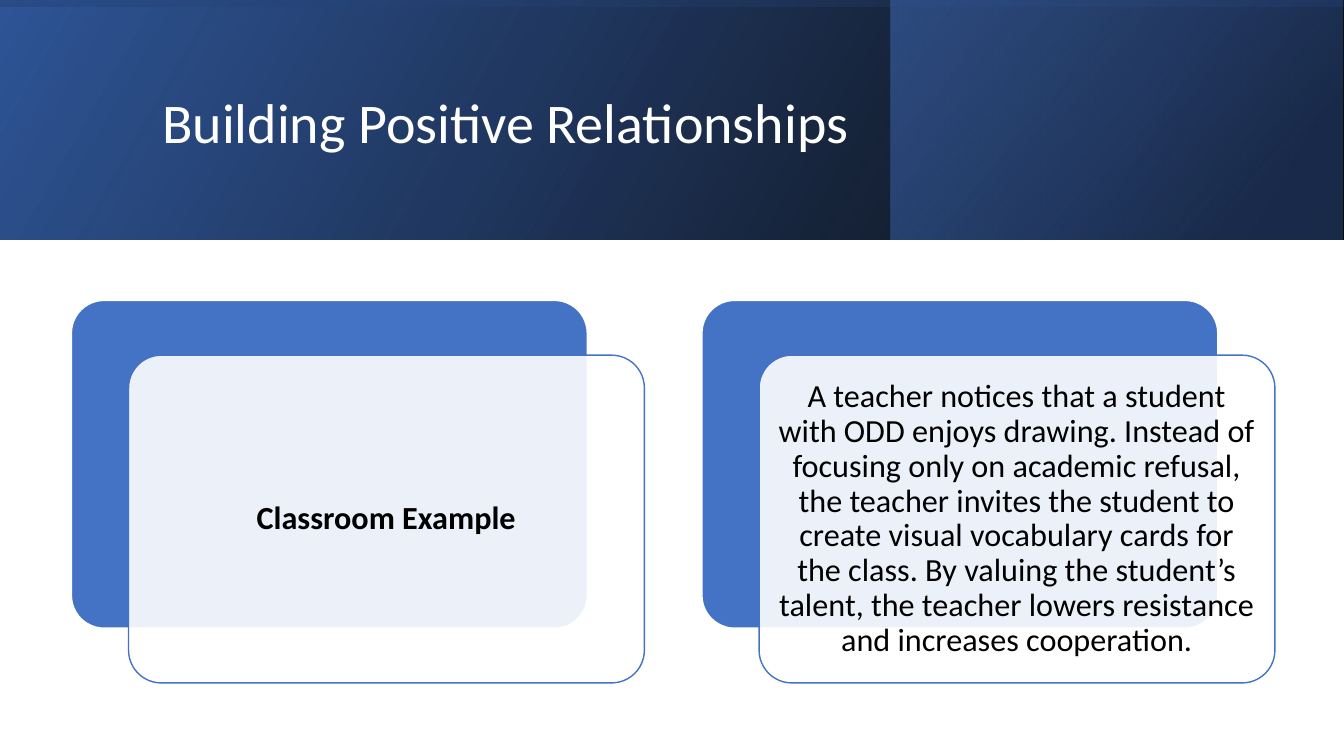
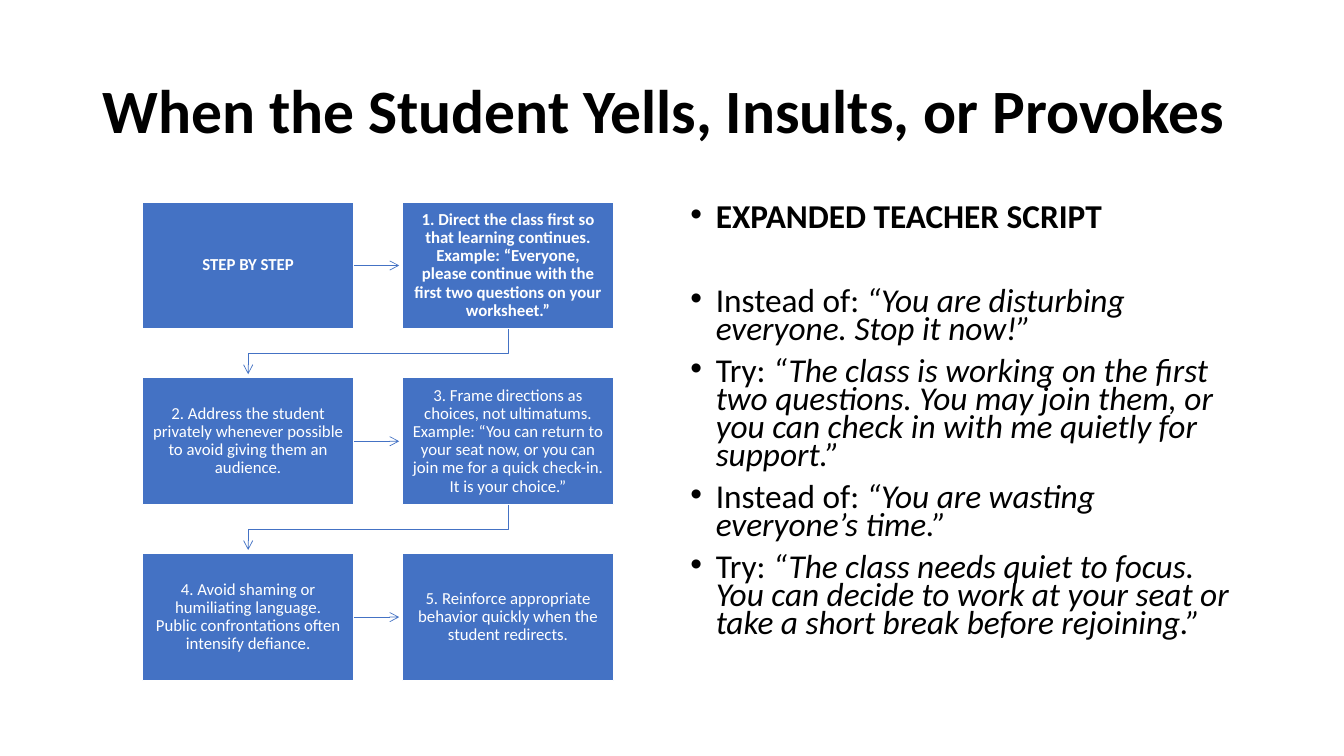
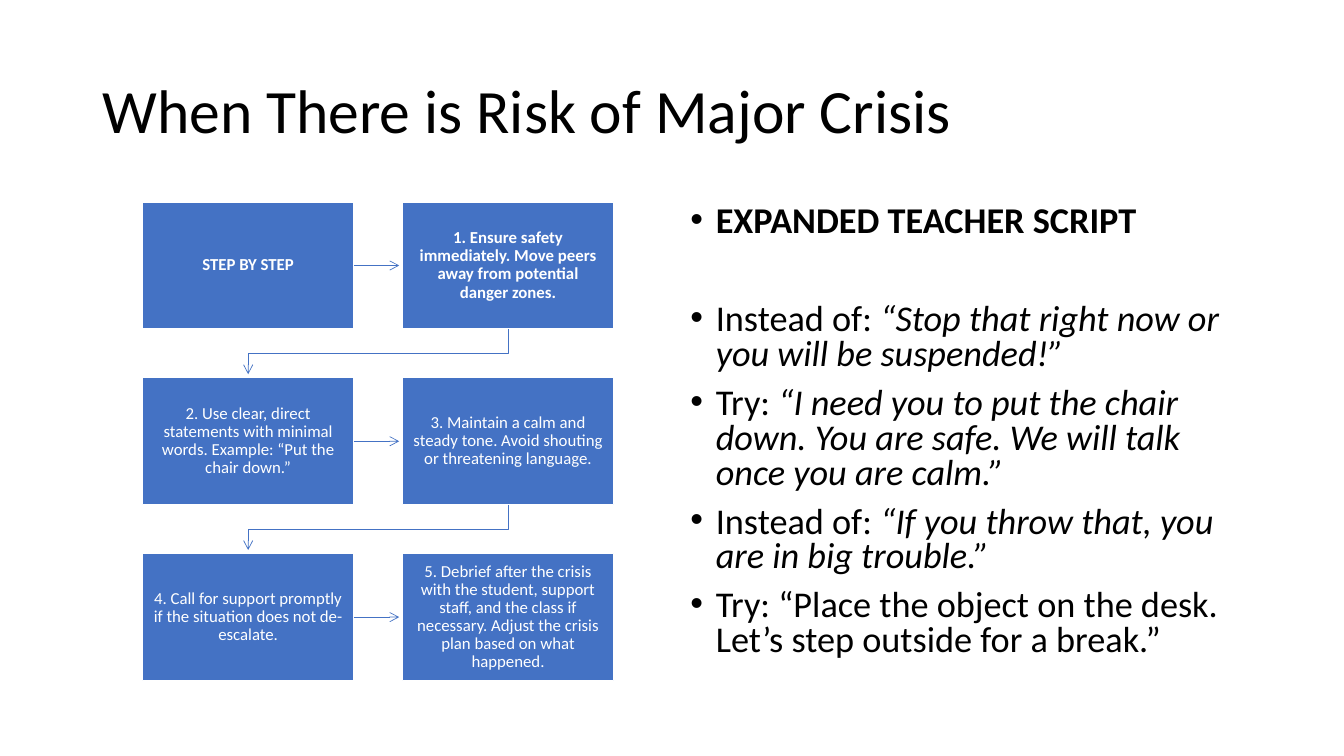
from dataclasses import dataclass

from lxml.etree import SubElement
from pptx import Presentation
from pptx.dml.color import RGBColor
from pptx.enum.shapes import MSO_CONNECTOR, MSO_SHAPE
from pptx.enum.text import MSO_ANCHOR, PP_ALIGN
from pptx.oxml.ns import qn
from pptx.util import Cm, Pt


@dataclass(frozen=True)
class Theme:
    """Colours, font and type sizes shared by the slides."""

    font: str = "Calibri"
    black: RGBColor = RGBColor(0x00, 0x00, 0x00)
    white: RGBColor = RGBColor(0xFF, 0xFF, 0xFF)
    blue: RGBColor = RGBColor(0x44, 0x72, 0xC4)
    deep_blue: RGBColor = RGBColor(0x2F, 0x55, 0x97)
    navy: RGBColor = RGBColor(0x20, 0x38, 0x64)
    banner_title: float = 40
    title: float = 44
    card: float = 23
    step: float = 12
    outline: float = 1
    arrow: float = 0.5
    line_spacing: float = 0.9


THEME = Theme()
SLIDE_WIDTH, SLIDE_HEIGHT = 33.87, 19.05
BANNER_HEIGHT = 6.03
BANNER_SPLIT = 22.44

CARD_LEFT, CARD_TOP, CARD_PITCH = 1.8, 7.57, 15.89
CARD_SIZE = (13.0, 8.26)
CARD_SHIFT = (1.44, 1.38)

STEP_LEFT, STEP_TOP = 3.59, 5.09
STEP_WIDTH, STEP_HEIGHT = 5.33, 3.2
STEP_PITCH_X, STEP_PITCH_Y = 6.55, 4.43
ARROW_LENGTH, BEND_DROP = 1.14, 0.62

SCRIPT_HEADING = "EXPANDED TEACHER SCRIPT"
STEP_HEADING = "STEP BY STEP"

CARDS = [
    ("Classroom Example", True),
    (
        "A teacher notices that a student with ODD enjoys drawing. Instead of focusing only on "
        "academic refusal, the teacher invites the student to create visual vocabulary cards for "
        "the class. By valuing the student’s talent, the teacher lowers resistance and increases "
        "cooperation.",
        False,
    ),
]

YELLING = {
    "title": "When the Student Yells, Insults, or Provokes",
    "bold": True,
    "steps": [
        "1. Direct the class first so that learning continues. Example: “Everyone, please continue "
        "with the first two questions on your worksheet.”",
        "2. Address the student privately whenever possible to avoid giving them an audience.",
        "3. Frame directions as choices, not ultimatums. Example: “You can return to your seat now, "
        "or you can join me for a quick check-in. It is your choice.”",
        "4. Avoid shaming or humiliating language. Public confrontations often intensify defiance.",
        "5. Reinforce appropriate behavior quickly when the student redirects.",
    ],
    "script": [
        ("Instead of: ", "“You are disturbing everyone. Stop it now!”"),
        (
            "Try: ",
            "“The class is working on the first two questions. You may join them, or you can check "
            "in with me quietly for support.”",
        ),
        ("Instead of: ", "“You are wasting everyone’s time.”"),
        (
            "Try: ",
            "“The class needs quiet to focus. You can decide to work at your seat or take a short "
            "break before rejoining.”",
        ),
    ],
    "size": 23.8,
    "spacing": 0.7,
    "heading_gap": 40,
}

CRISIS = {
    "title": "When There is Risk of Major Crisis",
    "bold": False,
    "steps": [
        "1. Ensure safety immediately. Move peers away from potential danger zones.",
        "2. Use clear, direct statements with minimal words. Example: “Put the chair down.”",
        "3. Maintain a calm and steady tone. Avoid shouting or threatening language.",
        "4. Call for support promptly if the situation does not de-escalate.",
        "5. Debrief after the crisis with the student, support staff, and the class if necessary. "
        "Adjust the crisis plan based on what happened.",
    ],
    "script": [
        ("Instead of: ", "“Stop that right now or you will be suspended!”"),
        (
            "Try: ",
            "“I need you to put the chair down. You are safe. We will talk once you are calm.”",
        ),
        ("Instead of: ", "“If you throw that, you are in big trouble.”"),
        ("Try: “Place the object on the desk. Let’s step outside for a break.”", ""),
    ],
    "size": 25.9,
    "spacing": 0.8,
    "heading_gap": 45,
}


def apply_format(target, **values):
    """Set each named attribute on the target."""
    for name, value in values.items():
        setattr(target, name, value)


def add_span(para, text, size, color, **style):
    """Add one run of text in the theme font."""
    span = para.add_run()
    span.text = text
    span.font.color.rgb = color
    apply_format(span.font, name=THEME.font, size=Pt(size), **style)


def set_alpha(shape, *percents):
    """Give the shape's fill colours their opacity, in order."""
    for color, percent in zip(shape.element.spPr.iter(qn("a:srgbClr")), percents):
        SubElement(color, qn("a:alpha")).set("val", str(percent * 1000))


def add_block(page, kind, left, top, width, height):
    """Add a preset shape without a shadow."""
    shape = page.shapes.add_shape(kind, Cm(left), Cm(top), Cm(width), Cm(height))
    shape.shadow.inherit = False
    return shape


def add_solid(page, kind, left, top, width, height, fill, outline):
    """Add a filled and outlined shape."""
    shape = add_block(page, kind, left, top, width, height)
    shape.fill.solid()
    shape.fill.fore_color.rgb = fill
    shape.line.color.rgb = outline
    shape.line.width = Pt(THEME.outline)
    return shape


def add_gradient(page, left, top, width, height, stops, angle, rotation=0):
    """Add a mirrored rectangle with a two-stop gradient."""
    shape = add_block(page, MSO_SHAPE.RECTANGLE, left, top, width, height)
    shape.line.fill.background()
    shape.fill.gradient()
    shape.fill.gradient_angle = angle
    for stop, (position, color, _) in zip(shape.fill.gradient_stops, stops):
        stop.position = position
        stop.color.rgb = color
    set_alpha(shape, *[opacity for _, _, opacity in stops])
    shape.rotation = rotation
    shape.element.spPr.find(qn("a:xfrm")).set("flipH", "1")


def add_textbox(page, left, top, width, height, anchor):
    """Add a wrapping text box and return its frame."""
    box = page.shapes.add_textbox(Cm(left), Cm(top), Cm(width), Cm(height))
    apply_format(box.text_frame, word_wrap=True, vertical_anchor=anchor)
    return box.text_frame


def add_title(page, text, left, top, width, height, size, color, bold=False):
    """Add the slide title."""
    frame = add_textbox(page, left, top, width, height, MSO_ANCHOR.MIDDLE)
    para = frame.paragraphs[0]
    para.line_spacing = THEME.line_spacing
    add_span(para, text, size, color, bold=bold)


def write_centred(shape, text, size, color, bold, inset_x, inset_y):
    """Write one centred paragraph inside a shape."""
    apply_format(
        shape.text_frame,
        word_wrap=True,
        vertical_anchor=MSO_ANCHOR.MIDDLE,
        margin_left=Cm(inset_x),
        margin_right=Cm(inset_x),
        margin_top=Cm(inset_y),
        margin_bottom=Cm(inset_y),
    )
    para = shape.text_frame.paragraphs[0]
    apply_format(para, alignment=PP_ALIGN.CENTER, line_spacing=THEME.line_spacing)
    add_span(para, text, size, color, bold=bold)


def add_banner(page):
    """Layer three gradients across the top of the page."""
    add_gradient(
        page, 0, 0, SLIDE_WIDTH, BANNER_HEIGHT,
        [(0, THEME.black, 96), (1, THEME.deep_blue, 100)], 30,
    )
    add_gradient(
        page, BANNER_SPLIT, 0, SLIDE_WIDTH - BANNER_SPLIT - 0.03, BANNER_HEIGHT,
        [(0.19, THEME.navy, 68), (1, THEME.blue, 48)], 40,
    )
    overhang = (SLIDE_WIDTH - BANNER_HEIGHT) / 2
    add_gradient(
        page, overhang, -overhang, BANNER_HEIGHT, SLIDE_WIDTH,
        [(0.23, THEME.deep_blue, 16), (0.99, THEME.black, 45)], 10, 270,
    )


def add_card(page, index, text, bold):
    """Add a translucent text card over a blue one."""
    left = CARD_LEFT + index * CARD_PITCH
    shift_x, shift_y = CARD_SHIFT
    kind = MSO_SHAPE.ROUNDED_RECTANGLE
    back = add_solid(page, kind, left, CARD_TOP, *CARD_SIZE, THEME.blue, THEME.white)
    front = add_solid(
        page, kind, left + shift_x, CARD_TOP + shift_y, *CARD_SIZE, THEME.white, THEME.blue
    )
    set_alpha(front, 90)
    for card in (back, front):
        card.adjustments[0] = 0.1
    write_centred(front, text, THEME.card, THEME.black, bold, 0.24, 0.25)


def style_arrow(arrow):
    """Give a line its colour, weight and arrowhead."""
    arrow.line.color.rgb = THEME.blue
    arrow.line.width = Pt(THEME.arrow)
    outline = arrow.element.spPr.find(qn("a:ln"))
    SubElement(outline, qn("a:tailEnd")).set("type", "arrow")


def add_straight_arrow(page, left, middle):
    """Add an arrow to the next step in the row."""
    arrow = page.shapes.add_connector(
        MSO_CONNECTOR.STRAIGHT, Cm(left), Cm(middle), Cm(left + ARROW_LENGTH), Cm(middle)
    )
    style_arrow(arrow)
    SubElement(arrow.element.spPr, qn("a:effectLst"))


def add_bent_arrow(page, start_x, end_x, top):
    """Add an arrow down to the first step of the next row."""
    bend, end = top + BEND_DROP, top + ARROW_LENGTH
    outline = page.shapes.build_freeform(Cm(start_x), Cm(top))
    corners = [(start_x, bend), (end_x, bend), (end_x, end)]
    outline.add_line_segments([(Cm(x), Cm(y)) for x, y in corners], close=False)
    arrow = outline.convert_to_shape()
    arrow.shadow.inherit = False
    arrow.fill.background()
    style_arrow(arrow)


def add_steps(page, steps):
    """Lay the steps out in two columns joined by arrows."""
    texts = [STEP_HEADING, *steps]
    for index, text in enumerate(texts):
        row, column = divmod(index, 2)
        left = STEP_LEFT + column * STEP_PITCH_X
        top = STEP_TOP + row * STEP_PITCH_Y
        step = add_solid(
            page, MSO_SHAPE.RECTANGLE, left, top, STEP_WIDTH, STEP_HEIGHT, THEME.blue, THEME.white
        )
        write_centred(step, text, THEME.step, THEME.white, row == 0, 0.26, 0.28)
        if column == 0:
            add_straight_arrow(page, left + STEP_WIDTH, top + STEP_HEIGHT / 2)
        elif index < len(texts) - 1:
            centre = left + STEP_WIDTH / 2
            add_bent_arrow(page, centre, centre - STEP_PITCH_X, top + STEP_HEIGHT)


def add_bullet(para, space_before, line_spacing):
    """Turn a paragraph into a hanging bullet."""
    properties = para._p.get_or_add_pPr()
    properties.set("marL", str(Cm(0.64)))
    properties.set("indent", str(Cm(-0.64)))
    SubElement(properties, qn("a:buFont")).set("typeface", "Arial")
    SubElement(properties, qn("a:buChar")).set("char", "•")
    apply_format(para, space_before=Pt(space_before), line_spacing=line_spacing)


def add_script(page, lines, size, spacing, heading_gap):
    """Add the bulleted teacher script."""
    frame = add_textbox(page, 17.15, 5.07, 14.4, 12.09, MSO_ANCHOR.TOP)
    heading = frame.paragraphs[0]
    add_bullet(heading, 0, spacing)
    add_span(heading, SCRIPT_HEADING, size, THEME.black, bold=True)
    for index, (lead, quote) in enumerate(lines):
        para = frame.add_paragraph()
        add_bullet(para, 10 if index else heading_gap, spacing)
        add_span(para, lead, size, THEME.black)
        if quote:
            add_span(para, quote, size, THEME.black, italic=True)


def build_example(page):
    """Build the classroom example slide."""
    add_banner(page)
    add_title(
        page, "Building Positive Relationships", 3.84, 0.97, 27, 4.37,
        THEME.banner_title, THEME.white,
    )
    for index, (text, bold) in enumerate(CARDS):
        add_card(page, index, text, bold)


def build_response(page, content):
    """Build a slide of steps beside a teacher script."""
    add_title(
        page, content["title"], 2.33, 1.01, 29.21, 3.68, THEME.title, THEME.black, content["bold"]
    )
    add_steps(page, content["steps"])
    add_script(
        page, content["script"], content["size"], content["spacing"], content["heading_gap"]
    )


def main():
    """Build and save the deck."""
    deck = Presentation()
    apply_format(deck, slide_width=Cm(SLIDE_WIDTH), slide_height=Cm(SLIDE_HEIGHT))
    blank = deck.slide_layouts[6]
    build_example(deck.slides.add_slide(blank))
    for content in (YELLING, CRISIS):
        build_response(deck.slides.add_slide(blank), content)
    deck.save("out.pptx")


if __name__ == "__main__":
    main()
